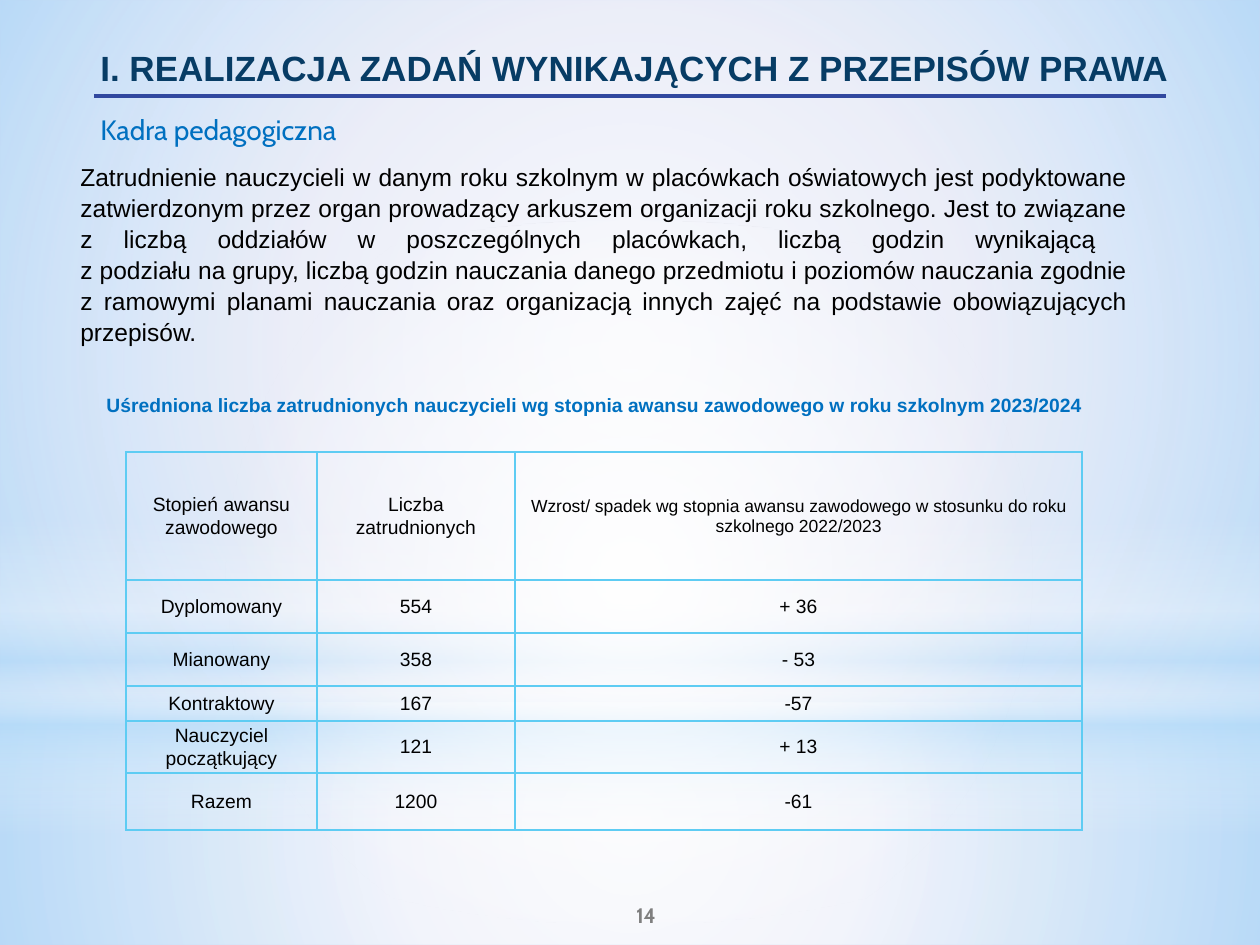
from typing import NamedTuple

from lxml.etree import SubElement
from pptx import Presentation
from pptx.dml.color import RGBColor
from pptx.enum.shapes import MSO_CONNECTOR, MSO_SHAPE
from pptx.enum.text import MSO_ANCHOR, PP_ALIGN
from pptx.oxml import parse_xml
from pptx.oxml.ns import nsdecls, qn
from pptx.util import Emu, Pt

EMU_PER_PX = 914400 / 126
LINEAR = '<a:lin ang="5400000" scaled="0"/>'
RADIAL = '<a:path path="circle"><a:fillToRect l="50000" t="50000" r="50000" b="50000"/></a:path>'


class Frame(NamedTuple):
    """Left, top, width and height in px."""
    left: int
    top: int
    width: int
    height: int


class Stop(NamedTuple):
    """Gradient stop with position and opacity in percent."""
    position: int
    colour: str
    opacity: int


class Glow(NamedTuple):
    """Translucent background layer."""
    preset: MSO_SHAPE
    frame: Frame
    direction: str
    stops: list[Stop]


class Style(NamedTuple):
    """Look of a paragraph; size and gaps in points, indent in px."""
    size: int
    colour: str = "000000"
    bold: bool = False
    font: str = "Arial"
    align: PP_ALIGN = PP_ALIGN.LEFT
    spacing: float = 1.0
    before: int = 0
    indent: int = 0


class Label(NamedTuple):
    """Text box with styled paragraphs."""
    frame: Frame
    paragraphs: list[tuple[str, Style]]
    anchor: MSO_ANCHOR = MSO_ANCHOR.TOP
    inset: int = 6


GLOWS = [
    Glow(MSO_SHAPE.RECTANGLE, Frame(0, 703, 1260, 242), RADIAL,
         [Stop(0, "FFFFFF", 91), Stop(37, "FFFFFF", 76), Stop(100, "B4DCFA", 79)]),
    Glow(MSO_SHAPE.RECTANGLE, Frame(0, 0, 1260, 703), RADIAL,
         [Stop(0, "FFFFFF", 89), Stop(48, "FFFFFF", 62), Stop(100, "B4DCFA", 79)]),
    Glow(MSO_SHAPE.RECTANGLE, Frame(0, 519, 1260, 315), LINEAR,
         [Stop(0, "FFFFFF", 0), Stop(29, "FFFFFF", 30), Stop(45, "B4DCFA", 40),
          Stop(55, "FFFFFF", 26), Stop(65, "B4DCFA", 60), Stop(100, "FFFFFF", 0)]),
    Glow(MSO_SHAPE.OVAL, Frame(0, 221, 1260, 703), RADIAL,
         [Stop(0, "FFFFFF", 100), Stop(56, "FFFFFF", 0)]),
]
BODY = (
    "Zatrudnienie nauczycieli w danym roku szkolnym w placówkach oświatowych jest podyktowane "
    "zatwierdzonym przez organ prowadzący arkuszem organizacji roku szkolnego. Jest to związane "
    "z liczbą oddziałów w poszczególnych placówkach, liczbą godzin wynikającą \v"
    "z podziału na grupy, liczbą godzin nauczania danego przedmiotu i poziomów nauczania zgodnie "
    "z ramowymi planami nauczania oraz organizacją innych zajęć na podstawie obowiązujących "
    "przepisów."
)
LABELS = [
    Label(Frame(520, 890, 252, 50),
          [("14", Style(12, "7F7F7F", True, "Cabin", PP_ALIGN.CENTER))], MSO_ANCHOR.MIDDLE),
    Label(Frame(63, 35, 1134, 110),
          [("I. REALIZACJA ZADAŃ WYNIKAJĄCYCH Z PRZEPISÓW PRAWA",
            Style(20, "073C65", True, indent=25)),
           ("Kadra pedagogiczna", Style(16, "0070C0", font="Cabin", before=14, indent=25))],
          inset=11),
    Label(Frame(68, 155, 1072, 221),
          [(BODY, Style(14, align=PP_ALIGN.JUSTIFY, spacing=1.05))]),
    Label(Frame(94, 387, 1038, 37),
          [("Uśredniona liczba zatrudnionych nauczycieli wg stopnia awansu zawodowego "
            "w roku szkolnym 2023/2024", Style(11, "0070C0", True))]),
]
TABLE_FRAME = Frame(126, 452, 956, 378)
COLUMN_WIDTHS = [191, 198, 567]
ROW_HEIGHTS = [128, 53, 53, 35, 52, 57]
STAFF = [
    ("Stopień awansu zawodowego", "Liczba zatrudnionych",
     "Wzrost/ spadek wg stopnia awansu zawodowego w stosunku do roku szkolnego 2022/2023"),
    ("Dyplomowany", "554", "+ 36"),
    ("Mianowany", "358", "- 53"),
    ("Kontraktowy", "167", "-57"),
    ("Nauczyciel początkujący", "121", "+ 13"),
    ("Razem", "1200", "-61"),
]


def px(length: int) -> Emu:
    """Turn px into EMU."""
    return Emu(round(length * EMU_PER_PX))


def rgb(colour: str) -> RGBColor:
    """Turn a hex string into a colour."""
    return RGBColor.from_string(colour)


def place(frame: Frame) -> list[Emu]:
    """Turn a frame into EMU lengths."""
    return [px(length) for length in frame]


def style_paragraph(paragraph, text: str, style: Style) -> None:
    """Write a paragraph and format its runs."""
    paragraph.text = text
    paragraph.alignment = style.align
    paragraph.line_spacing = style.spacing
    paragraph.space_before = Pt(style.before)
    if style.indent:
        paragraph._p.get_or_add_pPr().set("marL", str(px(style.indent)))
    for span in paragraph.runs:
        span.font.size = Pt(style.size)
        span.font.name = style.font
        span.font.bold = style.bold
        span.font.color.rgb = rgb(style.colour)


def draw_glow(page, glow: Glow) -> None:
    """Draw one translucent gradient layer."""
    shape = page.shapes.add_shape(glow.preset, *place(glow.frame))
    shape.shadow.inherit = False
    shape.line.fill.background()
    shape.fill.background()
    stops = "".join(
        f'<a:gs pos="{stop.position * 1000}"><a:srgbClr val="{stop.colour}">'
        f'<a:alpha val="{stop.opacity * 1000}"/></a:srgbClr></a:gs>'
        for stop in glow.stops)
    gradient = parse_xml(f'<a:gradFill {nsdecls("a")} rotWithShape="1">'
                         f'<a:gsLst>{stops}</a:gsLst>{glow.direction}</a:gradFill>')
    properties = shape.element.spPr
    properties.replace(properties.find(qn("a:noFill")), gradient)


def draw_label(page, label: Label) -> None:
    """Draw a text box."""
    box = page.shapes.add_textbox(*place(label.frame))
    text_frame = box.text_frame
    text_frame.word_wrap = True
    text_frame.vertical_anchor = label.anchor
    text_frame.margin_top = px(label.inset)
    for index, (text, style) in enumerate(label.paragraphs):
        paragraph = text_frame.add_paragraph() if index else text_frame.paragraphs[0]
        style_paragraph(paragraph, text, style)


def draw_rule(page) -> None:
    """Draw the line under the title."""
    rule = page.shapes.add_connector(MSO_CONNECTOR.STRAIGHT, px(94), px(96), px(1166), px(96))
    rule.line.color.rgb = rgb("31489F")
    rule.line.width = Pt(2.25)
    SubElement(rule.element.spPr, qn("a:effectLst"))


def draw_cell(cell, text: str, style: Style) -> None:
    """Fill one table cell and draw its borders."""
    style_paragraph(cell.text_frame.paragraphs[0], text, style)
    cell.vertical_anchor = MSO_ANCHOR.MIDDLE
    cell.margin_left = cell.margin_right = px(9)
    cell.margin_top = cell.margin_bottom = 0
    cell.fill.background()
    properties = cell._tc.get_or_add_tcPr()
    for index, side in enumerate(("lnL", "lnR", "lnT", "lnB")):
        properties.insert(index, parse_xml(
            f'<a:{side} {nsdecls("a")} w="12700"><a:solidFill>'
            f'<a:srgbClr val="5ECCF3"/></a:solidFill></a:{side}>'))


def draw_table(page) -> None:
    """Draw the staff table."""
    table = page.shapes.add_table(len(STAFF), len(COLUMN_WIDTHS), *place(TABLE_FRAME)).table
    table.first_row = table.horz_banding = False
    for column, width in zip(table.columns, COLUMN_WIDTHS):
        column.width = px(width)
    for row_index, (row, height) in enumerate(zip(table.rows, ROW_HEIGHTS)):
        row.height = px(height)
        for column_index, text in enumerate(STAFF[row_index]):
            size = 10 if (row_index, column_index) == (0, 2) else 11
            spacing = 1.06 if row_index == 0 or column_index == 0 else 1.0
            draw_cell(row.cells[column_index], text,
                      Style(size, align=PP_ALIGN.CENTER, spacing=spacing))


def main() -> None:
    """Build and save the slide."""
    deck = Presentation()
    deck.slide_width, deck.slide_height = px(1260), px(945)
    page = deck.slides.add_slide(deck.slide_layouts[6])
    page.background.fill.solid()
    page.background.fill.fore_color.rgb = rgb("CAD1EE")
    for glow in GLOWS:
        draw_glow(page, glow)
    for label in LABELS:
        draw_label(page, label)
    draw_rule(page)
    draw_table(page)
    deck.save("out.pptx")


if __name__ == "__main__":
    main()
